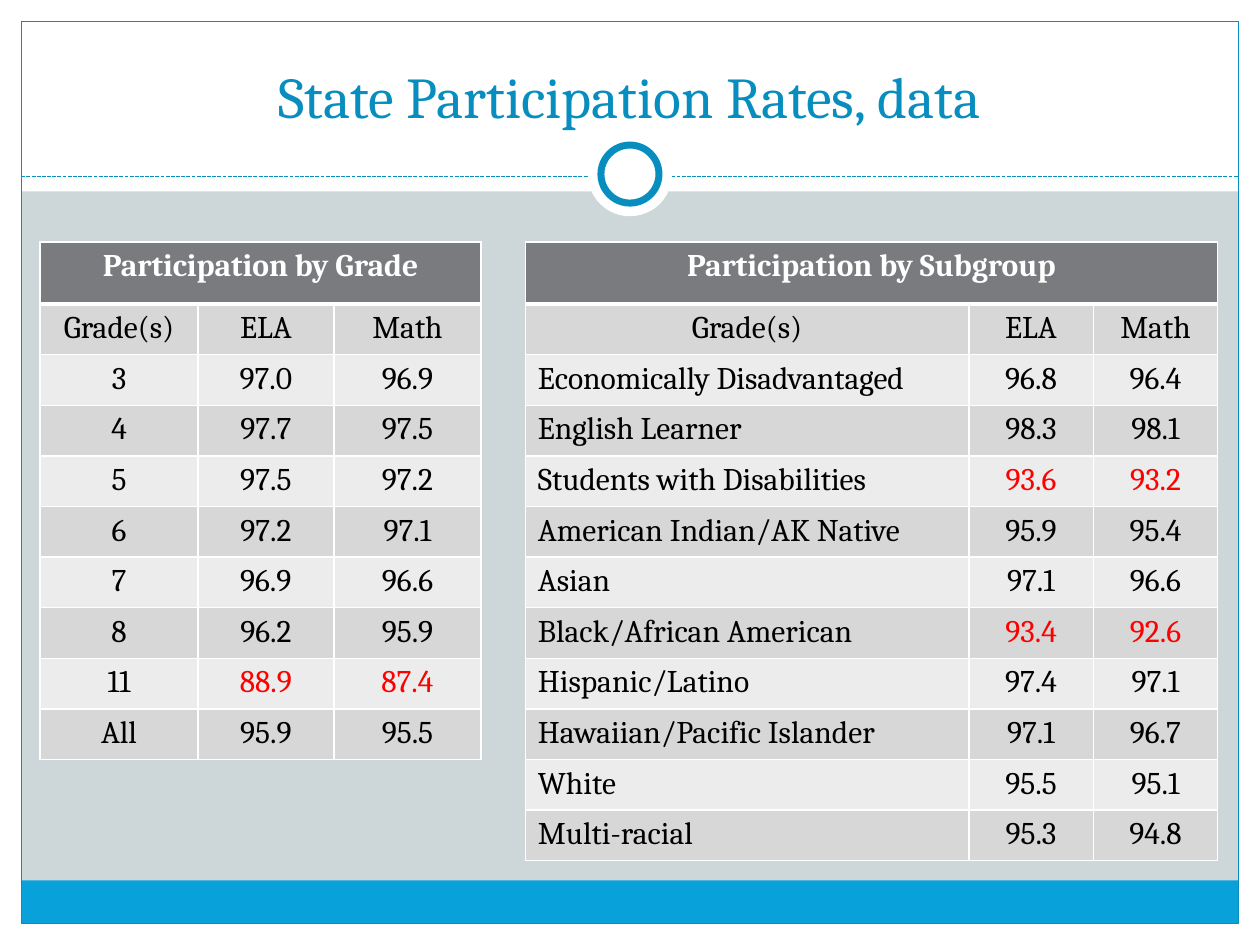
from dataclasses import dataclass

from pptx import Presentation
from pptx.dml.color import RGBColor as Rgb
from pptx.enum.dml import MSO_LINE_DASH_STYLE as Dash
from pptx.enum.shapes import MSO_CONNECTOR as Connector, MSO_SHAPE as Preset
from pptx.enum.text import MSO_ANCHOR as Anchor, PP_ALIGN as Align
from pptx.oxml.ns import qn
from pptx.util import Cm, Pt
from lxml.etree import SubElement


@dataclass(frozen=True)
class Theme:
    font: str = "Cambria"
    title_size: float = 33
    table_size: float = 18
    background: str = "CDD7D9"
    white: str = "FFFFFF"
    accent: str = "078EBF"
    footer: str = "08A1D9"
    header: str = "797B7E"
    dark_band: str = "D7D7D8"
    light_band: str = "ECECEC"
    text: str = "000000"
    low: str = "FF0000"


# Slide and frame measures in centimetres
WIDTH, HEIGHT, MARGIN = 25.4, 19.05, 0.43
RULE_Y, RING_Y = 3.56, 3.51
TABLE_TOP, HEADER_HEIGHT, ROW_HEIGHT = 4.88, 1.25, 1.02
LOW_RATE = 94  # rates below this are shown in red

GRADE_RATES = [
    ("3", "97.0", "96.9"),
    ("4", "97.7", "97.5"),
    ("5", "97.5", "97.2"),
    ("6", "97.2", "97.1"),
    ("7", "96.9", "96.6"),
    ("8", "96.2", "95.9"),
    ("11", "88.9", "87.4"),
    ("All", "95.9", "95.5"),
]
SUBGROUP_RATES = [
    ("Economically Disadvantaged", "96.8", "96.4"),
    ("English Learner", "98.3", "98.1"),
    ("Students with Disabilities", "93.6", "93.2"),
    ("American Indian/AK Native", "95.9", "95.4"),
    ("Asian", "97.1", "96.6"),
    ("Black/African American", "93.4", "92.6"),
    ("Hispanic/Latino", "97.4", "97.1"),
    ("Hawaiian/Pacific Islander", "97.1", "96.7"),
    ("White", "95.5", "95.1"),
    ("Multi-racial", "95.3", "94.8"),
]


class SlideBuilder:
    def __init__(self, slide, theme):
        self.slide = slide
        self.theme = theme
        fill = slide.background.fill
        fill.solid()
        fill.fore_color.rgb = Rgb.from_string(theme.background)

    def shape(self, preset, left, top, width, height, fill=None, line=None, weight=0.75):
        shape = self.slide.shapes.add_shape(
            preset, Cm(left), Cm(top), Cm(width), Cm(height))
        shape.shadow.inherit = False
        if fill:
            shape.fill.solid()
            shape.fill.fore_color.rgb = Rgb.from_string(fill)
        else:
            shape.fill.background()
        if line:
            shape.line.color.rgb = Rgb.from_string(line)
            shape.line.width = Pt(weight)
        else:
            shape.line.fill.background()

    def circle(self, center_y, diameter, **style):
        self.shape(Preset.OVAL, (WIDTH - diameter) / 2, center_y - diameter / 2,
                   diameter, diameter, **style)

    def dashed_rule(self, left, right, y):
        rule = self.slide.shapes.add_connector(
            Connector.STRAIGHT, Cm(left), Cm(y), Cm(right), Cm(y))
        rule.line.color.rgb = Rgb.from_string(self.theme.accent)
        rule.line.width = Pt(0.75)
        rule.line.dash_style = Dash.SQUARE_DOT
        SubElement(rule.element.spPr, qn("a:effectLst"))

    def run(self, paragraph, text, size, color, bold=False, align=Align.CENTER):
        paragraph.alignment = align
        run = paragraph.add_run()
        run.text = text
        run.font.name = self.theme.font
        run.font.size = Pt(size)
        run.font.bold = bold
        run.font.color.rgb = Rgb.from_string(color)

    def title(self, text, left, top, width, height):
        title = self.slide.shapes.title
        title.left, title.top = Cm(left), Cm(top)
        title.width, title.height = Cm(width), Cm(height)
        title.text_frame.vertical_anchor = Anchor.BOTTOM
        self.run(title.text_frame.paragraphs[0], text,
                 self.theme.title_size, self.theme.accent)
        # Bring the title in front of the frame
        title.element.getparent().append(title.element)

    def cell(self, cell, fill, top=1, bottom=1):
        properties = cell._tc.get_or_add_tcPr()
        for side, weight in (("L", 1), ("R", 1), ("T", top), ("B", bottom)):
            border = SubElement(properties, qn(f"a:ln{side}"), w=str(Pt(weight)))
            paint = SubElement(border, qn("a:solidFill"))
            SubElement(paint, qn("a:srgbClr"), val=self.theme.white)
        cell.fill.solid()
        cell.fill.fore_color.rgb = Rgb.from_string(fill)

    def rate_table(self, heading, rates, left, widths, label_align):
        theme = self.theme
        rows = [("Grade(s)", "ELA", "Math"), *rates]
        height = HEADER_HEIGHT + ROW_HEIGHT * len(rows)
        table = self.slide.shapes.add_table(
            len(rows) + 1, len(widths), Cm(left), Cm(TABLE_TOP),
            Cm(sum(widths)), Cm(height)).table
        for column, width in zip(table.columns, widths):
            column.width = Cm(width)
        for row in table.rows:
            row.height = Cm(ROW_HEIGHT)
        table.rows[0].height = Cm(HEADER_HEIGHT)

        # Heading across all columns
        for cell in table.rows[0].cells:
            self.cell(cell, theme.header, bottom=3)
        table.cell(0, 0).merge(table.cell(0, len(widths) - 1))
        self.run(table.cell(0, 0).text_frame.paragraphs[0], heading,
                 theme.table_size, theme.white, bold=True)

        # Column names and rates in alternating bands
        for row_index, values in enumerate(rows, start=1):
            band = theme.dark_band if row_index % 2 else theme.light_band
            for column_index, value in enumerate(values):
                cell = table.cell(row_index, column_index)
                self.cell(cell, band, top=3 if row_index == 1 else 1)
                is_label = column_index == 0 and row_index > 1
                is_rate = column_index > 0 and row_index > 1
                is_low = is_rate and float(value) < LOW_RATE
                self.run(cell.text_frame.paragraphs[0], value, theme.table_size,
                         theme.low if is_low else theme.text,
                         align=label_align if is_label else Align.CENTER)


def main():
    presentation = Presentation()
    presentation.slide_width, presentation.slide_height = Cm(WIDTH), Cm(HEIGHT)
    theme = Theme()
    slide = presentation.slides.add_slide(presentation.slide_layouts[5])
    builder = SlideBuilder(slide, theme)

    # White margins and title band
    for box in (
        (0, HEIGHT - MARGIN, WIDTH, MARGIN),
        (0, 0, WIDTH, 3.86),
        (0, 0, MARGIN, HEIGHT),
        (WIDTH - MARGIN, 0, MARGIN, HEIGHT),
    ):
        builder.shape(Preset.RECTANGLE, *box, fill=theme.white)

    # Footer bar, outline, rule and ring
    inner_width = WIDTH - 2 * MARGIN
    builder.shape(Preset.RECTANGLE, MARGIN, 17.75, inner_width, 0.87, fill=theme.footer)
    builder.shape(Preset.RECTANGLE, MARGIN, MARGIN, inner_width,
                  HEIGHT - 2 * MARGIN, line=theme.accent)
    builder.dashed_rule(MARGIN, WIDTH - MARGIN, RULE_Y)
    builder.circle(RING_Y, 1.7, fill=theme.white)
    builder.circle(RING_Y, 1.17, fill=theme.white, line=theme.accent, weight=4)

    builder.title("State Participation Rates, data", 0.84, 0.64, 23.7, 2.11)

    # Tables
    builder.rate_table("Participation by Grade", GRADE_RATES, 0.81,
                       (3.18, 2.74, 2.97), Align.CENTER)
    builder.rate_table("Participation by Subgroup", SUBGROUP_RATES, 10.59,
                       (8.94, 2.51, 2.51), Align.LEFT)

    presentation.save("out.pptx")


if __name__ == "__main__":
    main()
